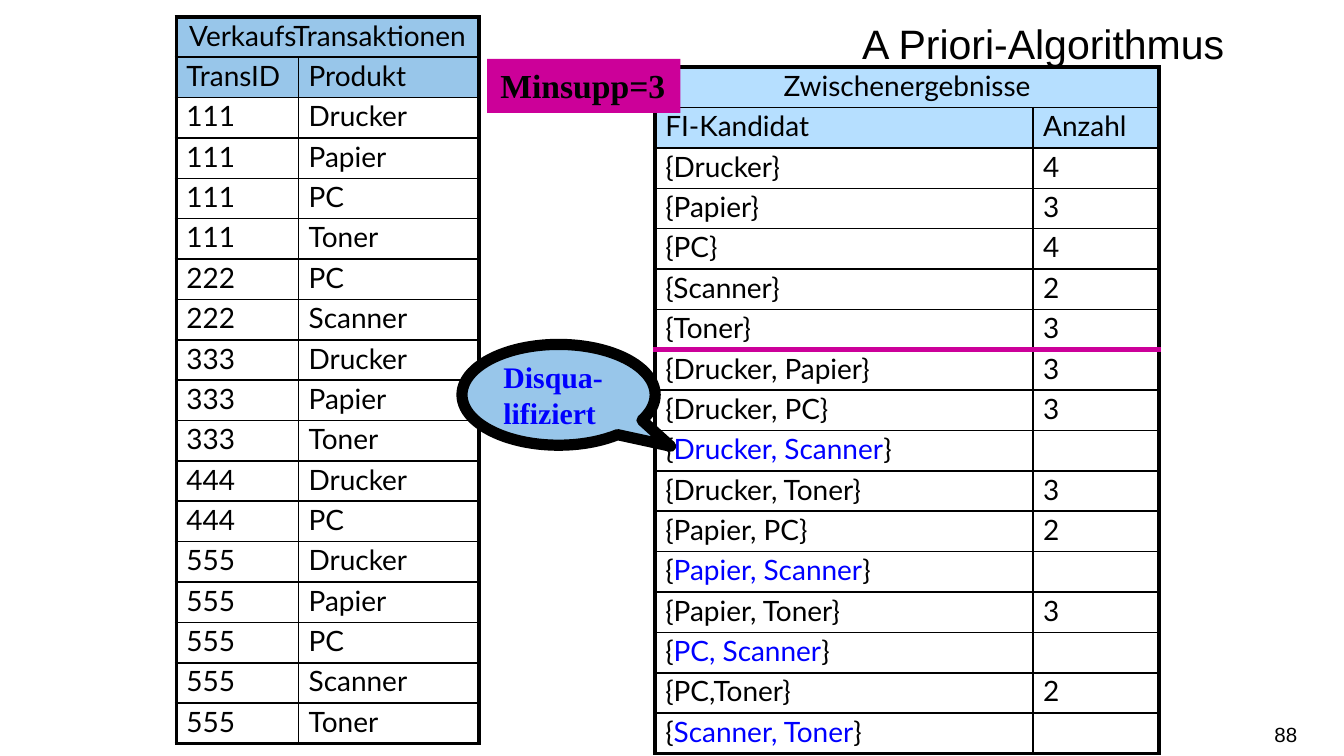
from dataclasses import dataclass

from pptx import Presentation
from pptx.dml.color import RGBColor
from pptx.enum.shapes import MSO_SHAPE
from pptx.enum.text import MSO_ANCHOR, MSO_AUTO_SIZE, PP_ALIGN
from pptx.oxml import parse_xml
from pptx.oxml.ns import nsdecls
from pptx.util import Pt

LEFT, CENTER, RIGHT = PP_ALIGN.LEFT, PP_ALIGN.CENTER, PP_ALIGN.RIGHT
TOP, MIDDLE = MSO_ANCHOR.TOP, MSO_ANCHOR.MIDDLE
GROW = MSO_AUTO_SIZE.SHAPE_TO_FIT_TEXT
RECT, CALLOUT = MSO_SHAPE.RECTANGLE, MSO_SHAPE.OVAL_CALLOUT


@dataclass(frozen=True)
class Theme:
    black: str = "000000"
    blue: str = "0000FF"
    magenta: str = "CC0099"
    sky: str = "98C6EA"
    pale: str = "B6DFFF"
    sans: str = "Arial"
    body: str = "Lato"
    serif: str = "Times New Roman"
    title_size: int = 22
    label_size: int = 18
    callout_size: int = 16
    table_size: int = 15
    empty_size: int = 12
    number_size: int = 11
    thin: float = 1
    thick: float = 2.25
    divider: float = 3
    row_height: float = 21.6


THEME = Theme()

TRANSACTIONS = {
    "111": ["Drucker", "Papier", "PC", "Toner"],
    "222": ["PC", "Scanner"],
    "333": ["Drucker", "Papier", "Toner"],
    "444": ["Drucker", "PC"],
    "555": ["Drucker", "Papier", "PC", "Scanner", "Toner"],
}

CANDIDATES = [
    ("{Drucker}", "4"),
    ("{Papier}", "3"),
    ("{PC}", "4"),
    ("{Scanner}", "2"),
    ("{Toner}", "3"),
    ("{Drucker, Papier}", "3"),
    ("{Drucker, PC}", "3"),
    ("{Drucker, Scanner}", ""),
    ("{Drucker, Toner}", "3"),
    ("{Papier, PC}", "2"),
    ("{Papier, Scanner}", ""),
    ("{Papier, Toner}", "3"),
    ("{PC, Scanner}", ""),
    ("{PC,Toner}", "2"),
    ("{Scanner, Toner}", ""),
]


def apply(obj, values):
    for name, value in values.items():
        setattr(obj, name, value)


def add_run(p, text, font, size, color, bold=False):
    r = p.add_run()
    r.text = text
    apply(r.font, {"name": font, "size": Pt(size), "bold": bold})
    r.font.color.rgb = RGBColor.from_string(color)


def write_text(sp, text, font, size, color, bold=False, align=LEFT, **frame):
    tf = sp.text_frame
    apply(tf, {"word_wrap": True, **frame})
    p = tf.paragraphs[0]
    p.alignment = align
    add_run(p, text, font, size, color, bold)


def add_label(slide, box, text, font, size, **frame):
    sp = slide.shapes.add_textbox(*map(Pt, box))
    write_text(sp, text, font, size, THEME.black, align=RIGHT, **frame)


def add_filled_shape(slide, kind, box, fill, line_width=0):
    sp = slide.shapes.add_shape(kind, *map(Pt, box))
    sp.shadow.inherit = False
    sp.fill.solid()
    sp.fill.fore_color.rgb = RGBColor.from_string(fill)
    if line_width:
        sp.line.width = Pt(line_width)
        sp.line.color.rgb = RGBColor.from_string(THEME.black)
    else:
        sp.line.fill.background()
    return sp


def set_borders(cell, borders):
    tc_pr = cell._tc.get_or_add_tcPr()
    for i, (side, (color, width)) in enumerate(borders.items()):
        tc_pr.insert(i, parse_xml(
            f'<a:ln{side} {nsdecls("a")} w="{Pt(width)}"><a:solidFill>'
            f'<a:srgbClr val="{color}"/></a:solidFill></a:ln{side}>'))


def fill_cell(cell, text, fill, align, disqualified):
    apply(cell, {"margin_left": Pt(5.4), "margin_right": Pt(5.4),
                 "margin_top": Pt(2.7), "margin_bottom": Pt(2.7)})
    if fill:
        cell.fill.solid()
        cell.fill.fore_color.rgb = RGBColor.from_string(fill)
    else:
        cell.fill.background()
    p = cell.text_frame.paragraphs[0]
    apply(p, {"alignment": align, "line_spacing": 0.9})
    if disqualified:
        parts = [(text[0], THEME.black), (text[1:-1], THEME.blue), (text[-1], THEME.black)]
    else:
        parts = [(text, THEME.black)]
    if text:
        for part, color in parts:
            add_run(p, part, THEME.body, THEME.table_size, color)
    else:
        p._p.append(parse_xml(
            f'<a:endParaRPr {nsdecls("a")} sz="{THEME.empty_size * 100}"/>'))


def add_data_table(slide, left, top, widths, title, header, rows, fill, divider_row=None):
    cells = [(title, ""), header, *rows]
    last_row, last_col = len(cells) - 1, len(widths) - 1
    table = slide.shapes.add_table(
        len(cells), len(widths), Pt(left), Pt(top),
        Pt(sum(widths)), Pt(THEME.row_height * len(cells))).table
    apply(table, {"first_row": False, "horz_banding": False})
    for column, width in zip(table.columns, widths):
        column.width = Pt(width)
    table.cell(0, 0).merge(table.cell(0, last_col))

    thin, thick = (THEME.black, THEME.thin), (THEME.black, THEME.thick)
    divider = (THEME.magenta, THEME.divider)
    for i, texts in enumerate(cells):
        table.rows[i].height = Pt(THEME.row_height)
        for j, text in enumerate(texts):
            cell = table.cell(i, j)
            fill_cell(cell, text, fill if i < 2 else None,
                      CENTER if i == 0 else LEFT,
                      i > 1 and j == 0 and not texts[1])
            borders = {
                "L": thick if j == 0 else thin,
                "R": thick if j == last_col or i == 0 else thin,
                "T": thick if i == 0 else thin,
                "B": thick if i == last_row else thin,
            }
            if divider_row is not None:
                if i == divider_row:
                    borders["B"] = divider
                elif i == divider_row + 1:
                    borders["T"] = divider
            set_borders(cell, borders)


def main():
    prs = Presentation()
    apply(prs, {"slide_width": Pt(720), "slide_height": Pt(405)})
    slide = prs.slides.add_slide(prs.slide_layouts[6])

    add_label(slide, (0, 0, 663, 67.5), "A Priori-Algorithmus",
              THEME.sans, THEME.title_size, margin_top=Pt(10))

    sales = [(trans_id, product) for trans_id, products in TRANSACTIONS.items()
             for product in products]
    add_data_table(slide, 94.5, 9, (65.5, 96.5), "VerkaufsTransaktionen",
                   ("TransID", "Produkt"), sales, THEME.sky)
    add_data_table(slide, 351, 36, (202.5, 67.5), "Zwischenergebnisse",
                   ("FI-Kandidat", "Anzahl"), CANDIDATES, THEME.pale, divider_row=6)

    callout = add_filled_shape(slide, CALLOUT, (247.5, 184.5, 103.5, 54), THEME.sky, 6)
    callout.adjustments[0], callout.adjustments[1] = 0.58, 0.51
    write_text(callout, "Disqua-lifiziert", THEME.serif, THEME.callout_size,
               THEME.blue, bold=True, vertical_anchor=MIDDLE)

    minsupp = add_filled_shape(slide, RECT, (261, 31.5, 103.5, 29), THEME.magenta)
    write_text(minsupp, "Minsupp=3", THEME.serif, THEME.label_size, THEME.black,
               bold=True, vertical_anchor=TOP, word_wrap=False, auto_size=GROW)

    add_label(slide, (533.5, 382.5, 161.5, 21.6), "88", THEME.sans, THEME.number_size,
              vertical_anchor=MIDDLE, margin_left=0, margin_right=0)

    prs.save("out.pptx")


if __name__ == "__main__":
    main()
